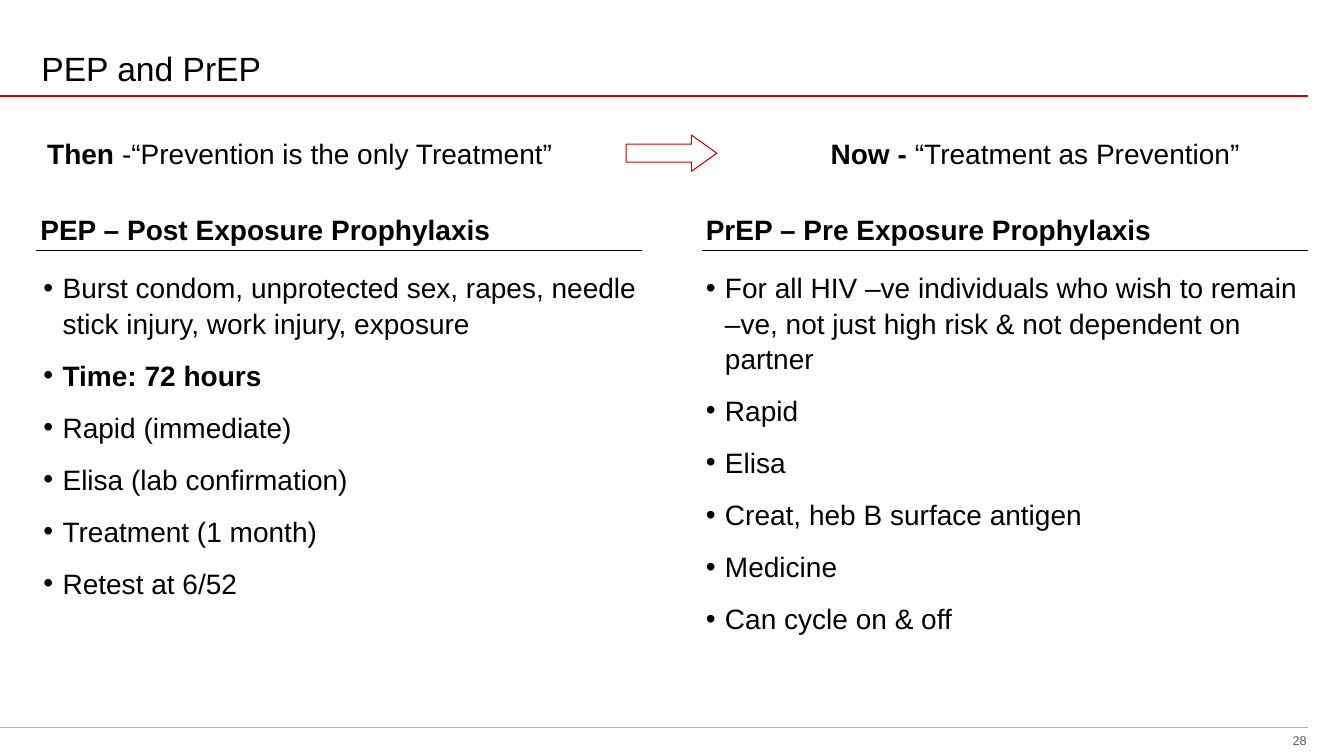
import pptx
import pptx.dml.color
import pptx.enum.shapes
import pptx.enum.text
import pptx.oxml
import pptx.oxml.ns
import pptx.util
from dataclasses import dataclass

PX = 9144  # EMU per px, 100 px to the inch
ALIGN = pptx.enum.text.PP_ALIGN
ANCHOR = pptx.enum.text.MSO_ANCHOR


@dataclass(frozen=True)
class Theme:
    font: str = "Arial"
    ink: str = "000000"
    accent: str = "CC0000"
    rule: str = "B4B4B4"
    muted: str = "5C5C5C"
    title: int = 24
    body: int = 20
    number: int = 9


theme = Theme()


def write(sp, paragraphs, box, size=theme.body, color=theme.ink, align=ALIGN.LEFT,
          anchor=ANCHOR.TOP, insets=(4, 4, 4, 4), before=0, spacing=1.0,
          bullet=False, tab=None):
    """Place sp at box and fill it; each paragraph is a list of (text, bold) runs."""
    sp.left, sp.top, sp.width, sp.height = (v * PX for v in box)
    tf = sp.text_frame
    tf.word_wrap = True
    tf.auto_size = pptx.enum.text.MSO_AUTO_SIZE.NONE
    tf.vertical_anchor = anchor
    tf.margin_left, tf.margin_top, tf.margin_right, tf.margin_bottom = (v * PX for v in insets)
    for i, runs in enumerate(paragraphs):
        p = tf.add_paragraph() if i else tf.paragraphs[0]
        p.alignment = align
        p.space_before = pptx.util.Pt(before)
        p.line_spacing = spacing
        pPr = p._p.get_or_add_pPr()
        ns = pptx.oxml.ns.nsdecls("a")
        if bullet:
            pPr.set("marL", str(19 * PX))
            pPr.set("indent", str(-19 * PX))
            pPr.append(pptx.oxml.parse_xml(f'<a:buFont {ns} typeface="{theme.font}"/>'))
            pPr.append(pptx.oxml.parse_xml(f'<a:buChar {ns} char="•"/>'))
        if tab:
            pPr.append(pptx.oxml.parse_xml(
                f'<a:tabLst {ns}><a:tab pos="{tab * PX}" algn="l"/></a:tabLst>'))
        for text, bold in runs:
            r = p.add_run()
            r.text = text
            r.font.name = theme.font
            r.font.size = pptx.util.Pt(size)
            r.font.bold = bold
            r.font.color.rgb = pptx.dml.color.RGBColor.from_string(color)


def add_rule(s, left, right, y, color, width=0.75):
    line = s.shapes.add_connector(pptx.enum.shapes.MSO_CONNECTOR.STRAIGHT,
                                  left * PX, y * PX, right * PX, y * PX)
    line.line.color.rgb = pptx.dml.color.RGBColor.from_string(color)
    line.line.width = pptx.util.Pt(width)
    line._element.spPr.append(
        pptx.oxml.parse_xml(f'<a:effectLst {pptx.oxml.ns.nsdecls("a")}/>'))


prs = pptx.Presentation()
prs.slide_width, prs.slide_height = 1333 * PX, 750 * PX
s = prs.slides.add_slide(prs.slide_layouts.get_by_name("Comparison"))
holders = {sp.placeholder_format.idx: sp for sp in s.placeholders}

# Frame: title, slide number and the two full-width rules
write(holders[0], [[("PEP and PrEP", False)]], (37, 0, 1260, 96), size=theme.title,
      anchor=ANCHOR.BOTTOM, insets=(4, 4, 4, 8))
add_rule(s, 0, 1297, 95, theme.accent, width=1.5)
add_rule(s, 0, 1297, 722, theme.rule)
write(s.shapes.add_textbox(0, 0, 0, 0), [[("28", False)]], (1266, 727, 30, 15),
      size=theme.number, color=theme.muted, align=ALIGN.RIGHT,
      anchor=ANCHOR.MIDDLE, insets=(0, 0, 0, 0))

# Then and now
write(s.shapes.add_textbox(0, 0, 0, 0),
      [[("Then ", True), ("-“Prevention is the only Treatment”\t", False),
        ("Now - ", True), ("“Treatment as Prevention”", False)]],
      (37, 131, 1260, 44), insets=(10, 5, 10, 5), tab=777)
arrow = s.shapes.add_shape(pptx.enum.shapes.MSO_SHAPE.RIGHT_ARROW,
                           621 * PX, 134 * PX, 90 * PX, 36 * PX)
arrow.adjustments[0], arrow.adjustments[1] = 0.5, 0.7
arrow.shadow.inherit = False
arrow.fill.background()
arrow.line.color.rgb = pptx.dml.color.RGBColor.from_string(theme.accent)
arrow.line.width = pptx.util.Pt(0.75)

# Two columns: heading placeholder, its text, heading left, list left, list height, list items
columns = [
    (1, "PEP – Post Exposure Prophylaxis", 36, 39, 328, [
        ("Burst condom, unprotected sex, rapes, needle stick injury, work injury, exposure", False),
        ("Time: 72 hours", True),
        ("Rapid (immediate)", False),
        ("Elisa (lab confirmation)", False),
        ("Treatment (1 month)", False),
        ("Retest at 6/52", False)]),
    (3, "PrEP – Pre Exposure Prophylaxis", 696, 696, 361, [
        ("For all HIV –ve individuals who wish to remain –ve, "
         "not just high risk & not dependent on partner", False),
        ("Rapid", False),
        ("Elisa", False),
        ("Creat, heb B surface antigen", False),
        ("Medicine", False),
        ("Can cycle on & off", False)]),
]
for idx, heading, left, list_left, height, items in columns:
    write(holders[idx], [[(heading, True)]], (left, 207, 601, 41), anchor=ANCHOR.BOTTOM)
    add_rule(s, left, left + 601, 249, theme.ink)
    write(holders[idx + 1], [[item] for item in items], (list_left, 263, 601, height),
          before=12, spacing=1.05, bullet=True)

prs.save("out.pptx")
